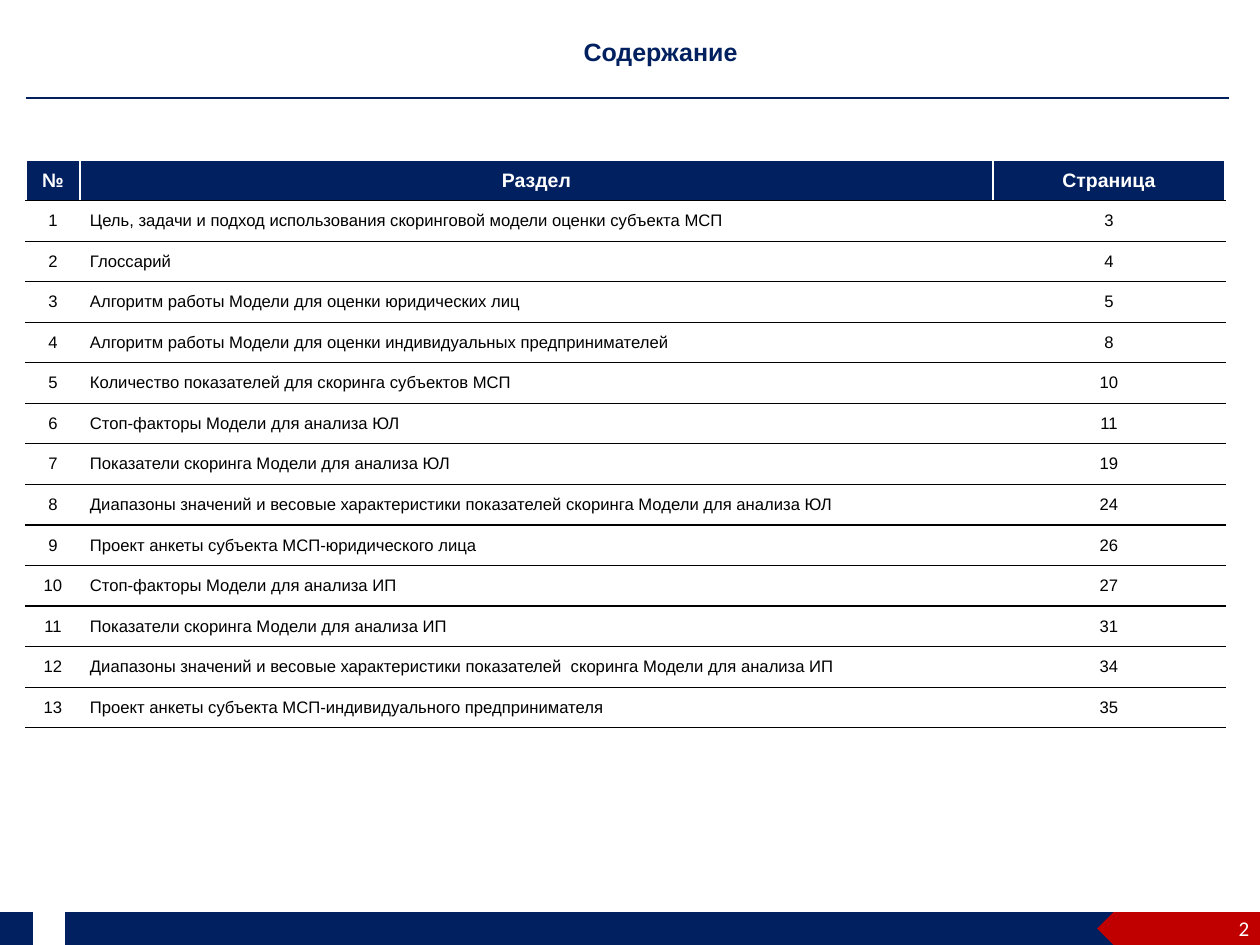
from dataclasses import dataclass

from lxml import etree
from pptx import Presentation
from pptx.dml.color import RGBColor
from pptx.enum.shapes import MSO_CONNECTOR, MSO_SHAPE
from pptx.enum.text import MSO_ANCHOR, PP_ALIGN
from pptx.oxml.ns import qn
from pptx.slide import Slide
from pptx.table import _Cell
from pptx.text.text import TextFrame
from pptx.util import Inches, Pt

CENTER, LEFT, RIGHT = PP_ALIGN.CENTER, PP_ALIGN.LEFT, PP_ALIGN.RIGHT
MIDDLE, TOP = MSO_ANCHOR.MIDDLE, MSO_ANCHOR.TOP
PENTAGON = MSO_SHAPE.PENTAGON
STRAIGHT = MSO_CONNECTOR.STRAIGHT


@dataclass(frozen=True)
class Theme:
    navy: str = "002060"
    red: str = "C00000"
    white: str = "FFFFFF"
    black: str = "000000"
    heading_font: str = "Arial"
    number_font: str = "Calibri"
    title_size: float = 18
    header_size: float = 14
    body_size: float = 12
    number_size: float = 15.1
    border_width: float = 1
    rule_width: float = 1.75


@dataclass(frozen=True)
class TextStyle:
    font: str
    size: float
    color: str
    bold: bool = False


@dataclass(frozen=True)
class FooterBand:
    left: float
    width: float
    color: str
    point: float


@dataclass(frozen=True)
class Column:
    header: str
    width: float
    align: PP_ALIGN
    margins: tuple[float, float] = (0.1, 0.05)


@dataclass(frozen=True)
class Section:
    title: str
    page_number: int


THEME = Theme()
TITLE = TextStyle(THEME.heading_font, THEME.title_size, THEME.navy, True)
HEADER = TextStyle(THEME.heading_font, THEME.header_size, THEME.white, True)
BODY = TextStyle(THEME.heading_font, THEME.body_size, THEME.black)
NUMBER = TextStyle(THEME.number_font, THEME.number_size, THEME.white)

FOOTER_TOP, FOOTER_HEIGHT = 9.12, 0.33
FOOTER_BANDS = [
    FooterBand(0.65, 10.82, THEME.navy, 0),
    FooterBand(10.97, 1.63, THEME.red, 0.5),
    FooterBand(0, 0.33, THEME.navy, 0),
]

TABLE_LEFT, TABLE_TOP, TABLE_HEIGHT = 0.26, 1.6, 5.68
COLUMNS = [
    Column("№", 0.54, CENTER),
    Column("Раздел", 9.13, LEFT),
    Column("Страница", 2.32, CENTER, (0.04, 0.02)),
]
SECTIONS = [
    Section("Цель, задачи и подход использования скоринговой модели оценки субъекта МСП", 3),
    Section("Глоссарий", 4),
    Section("Алгоритм работы Модели для оценки юридических лиц", 5),
    Section("Алгоритм работы Модели для оценки индивидуальных предпринимателей", 8),
    Section("Количество показателей для скоринга субъектов МСП", 10),
    Section("Стоп-факторы Модели для анализа ЮЛ", 11),
    Section("Показатели скоринга Модели для анализа ЮЛ", 19),
    Section("Диапазоны значений и весовые характеристики показателей скоринга Модели для анализа ЮЛ", 24),
    Section("Проект анкеты субъекта МСП-юридического лица", 26),
    Section("Стоп-факторы Модели для анализа ИП", 27),
    Section("Показатели скоринга Модели для анализа ИП", 31),
    Section("Диапазоны значений и весовые характеристики показателей  скоринга Модели для анализа ИП", 34),
    Section("Проект анкеты субъекта МСП-индивидуального предпринимателя", 35),
]


def write_text(frame: TextFrame, text: str, style: TextStyle, **para_format) -> None:
    para = frame.paragraphs[0]
    for name, value in para_format.items():
        setattr(para, name, value)
    span = para.add_run()
    span.text = text
    font_format = {"name": style.font, "size": Pt(style.size), "bold": style.bold}
    for name, value in font_format.items():
        setattr(span.font, name, value)
    span.font.color.rgb = RGBColor.from_string(style.color)


def add_text_box(page: Slide, left: float, top: float, width: float, height: float,
                 anchor: MSO_ANCHOR) -> TextFrame:
    box = page.shapes.add_textbox(Inches(left), Inches(top), Inches(width), Inches(height))
    box.text_frame.word_wrap = True
    box.text_frame.vertical_anchor = anchor
    return box.text_frame


def add_heading(page: Slide) -> None:
    rule = page.shapes.add_connector(
        STRAIGHT, Inches(0.26), Inches(0.98), Inches(12.29), Inches(0.98))
    rule.line.color.rgb = RGBColor.from_string(THEME.navy)
    rule.line.width = Pt(THEME.rule_width)
    etree.SubElement(rule._element.spPr, qn("a:effectLst"))
    frame = add_text_box(page, 0.65, 0.37, 11.91, 0.34, TOP)
    write_text(frame, "Содержание", TITLE,
               alignment=CENTER, line_spacing=0.8, space_after=Pt(4))


def add_footer(page: Slide) -> None:
    for band in FOOTER_BANDS:
        shape = page.shapes.add_shape(
            PENTAGON, Inches(band.left), Inches(FOOTER_TOP),
            Inches(band.width), Inches(FOOTER_HEIGHT))
        shape.adjustments[0] = band.point
        shape.rotation = 180
        shape.shadow.inherit = False
        shape.fill.solid()
        shape.fill.fore_color.rgb = RGBColor.from_string(band.color)
        shape.line.fill.background()
    frame = add_text_box(page, 9.76, 9.03, 2.83, 0.5, MIDDLE)
    write_text(frame, "2", NUMBER, alignment=RIGHT)


def set_borders(cell: _Cell, top_color: str) -> None:
    properties = cell._tc.get_or_add_tcPr()
    sides = {"L": THEME.white, "R": THEME.white, "T": top_color, "B": THEME.black}
    for side, color in sides.items():
        line = etree.SubElement(properties, qn(f"a:ln{side}"),
                                w=str(Pt(THEME.border_width)))
        fill = etree.SubElement(line, qn("a:solidFill"))
        etree.SubElement(fill, qn("a:srgbClr"), val=color)


def fill_cell(cell: _Cell, text: str, style: TextStyle, align: PP_ALIGN,
              fill: str, top_color: str) -> None:
    set_borders(cell, top_color)
    cell.fill.solid()
    cell.fill.fore_color.rgb = RGBColor.from_string(fill)
    cell.vertical_anchor = MIDDLE
    write_text(cell.text_frame, text, style, alignment=align, space_after=Pt(3))


def add_contents_table(page: Slide) -> None:
    row_count = len(SECTIONS) + 1
    table = page.shapes.add_table(
        row_count, len(COLUMNS), Inches(TABLE_LEFT), Inches(TABLE_TOP),
        Inches(sum(column.width for column in COLUMNS)), Inches(TABLE_HEIGHT)).table
    for row in table.rows:
        row.height = Inches(TABLE_HEIGHT / row_count)
    for col, column in enumerate(COLUMNS):
        table.columns[col].width = Inches(column.width)
        fill_cell(table.cell(0, col), column.header, HEADER, CENTER,
                  THEME.navy, THEME.white)
    for row, section in enumerate(SECTIONS, start=1):
        values = (str(row), section.title, str(section.page_number))
        for col, (column, value) in enumerate(zip(COLUMNS, values)):
            cell = table.cell(row, col)
            fill_cell(cell, value, BODY, column.align, THEME.white, THEME.black)
            side, end = (Inches(margin) for margin in column.margins)
            cell.margin_left = cell.margin_right = side
            cell.margin_top = cell.margin_bottom = end


def main() -> None:
    deck = Presentation()
    deck.slide_width, deck.slide_height = Inches(12.6), Inches(9.45)
    page = deck.slides.add_slide(deck.slide_layouts[6])
    # Title and rule
    add_heading(page)
    # Footer bands and page number
    add_footer(page)
    # Table of contents
    add_contents_table(page)
    deck.save("out.pptx")


if __name__ == "__main__":
    main()
